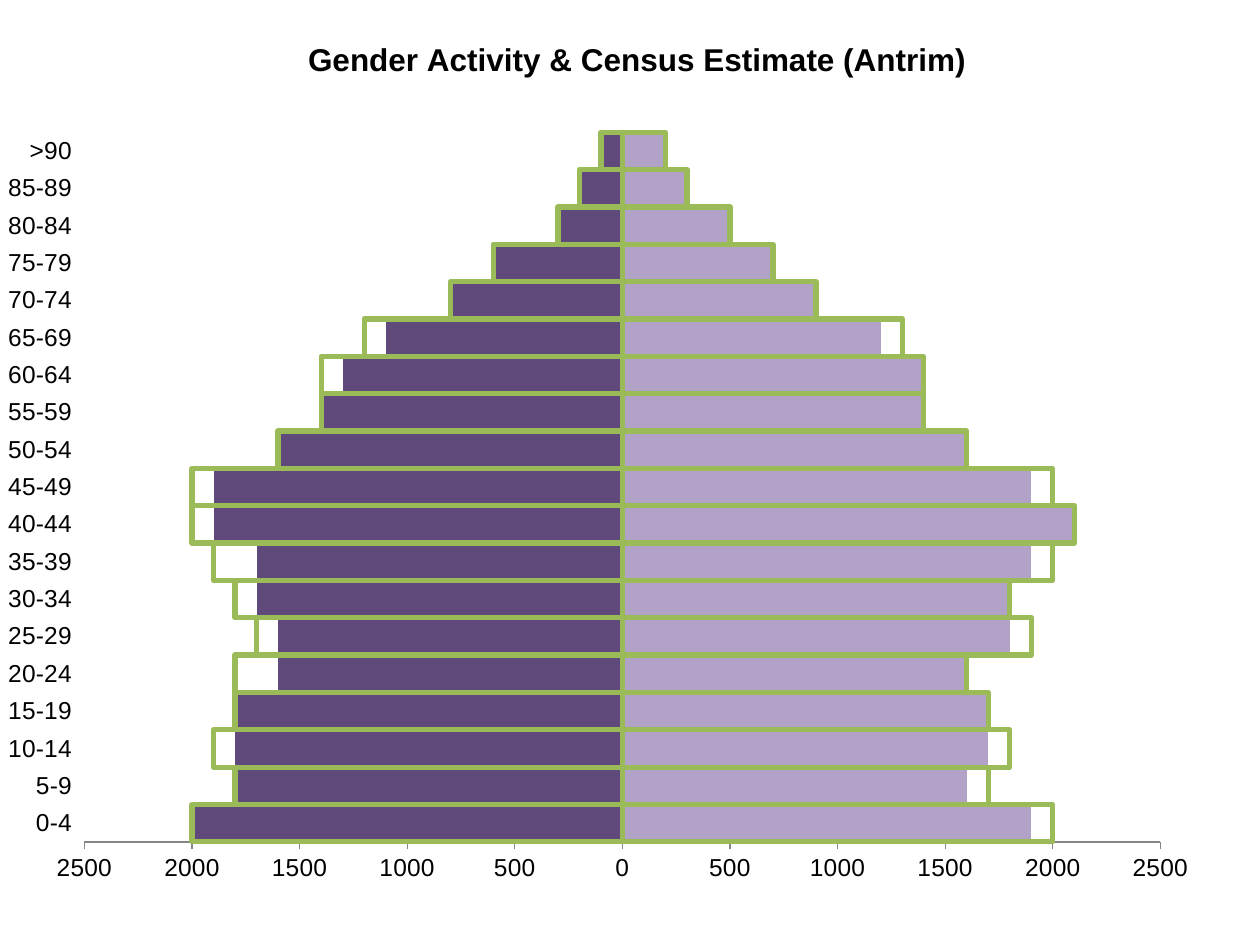
"""Build a population pyramid slide comparing activity with census estimates."""
import pptx
import pptx.chart.data
import pptx.dml.color
import pptx.enum.chart
import pptx.oxml
import pptx.oxml.ns
import pptx.util

Pt = pptx.util.Pt
XL = pptx.enum.chart
TITLE = "Gender Activity & Census Estimate (Antrim)"
AGES = [f"{a}-{a + 4}" for a in range(0, 90, 5)] + [">90"]
SERIES = [
    ("Series 1", "604A7B", None,
     [-2000, -1800, -1800, -1800, -1600, -1600, -1700, -1700, -1900, -1900,
      -1600, -1400, -1300, -1100, -800, -600, -300, -200, -100]),
    ("Series 2", None, "9BBB59",
     [-2000, -1800, -1900, -1800, -1800, -1700, -1800, -1900, -2000, -2000,
      -1600, -1400, -1400, -1200, -800, -600, -300, -200, -100]),
    ("Series 3", "B3A2C7", None,
     [1900, 1600, 1700, 1700, 1600, 1800, 1800, 1900, 2100, 1900,
      1600, 1400, 1400, 1200, 900, 700, 500, 300, 200]),
    ("Series 4", None, "9BBB59",
     [2000, 1700, 1800, 1700, 1600, 1900, 1800, 2000, 2100, 2000,
      1600, 1400, 1400, 1300, 900, 700, 500, 300, 200]),
]


def rgb(value):
    return pptx.dml.color.RGBColor.from_string(value)


def style_font(font, size, bold=False):
    font.name, font.size, font.bold = "Arial", Pt(size), bold
    font.color.rgb = rgb("000000")


def set_layout(parent, index, target=None, **place):
    for old in parent.findall(pptx.oxml.ns.qn("c:layout")):
        parent.remove(old)
    parts = [("layoutTarget", target)] if target else []
    parts += [(f"{k}Mode", "edge") for k in "xy"]
    parts += place.items()
    body = "".join(f'<c:{k} val="{v}"/>' for k, v in parts)
    parent.insert(index, pptx.oxml.parse_xml(
        f'<c:layout {pptx.oxml.ns.nsdecls("c")}><c:manualLayout>{body}'
        "</c:manualLayout></c:layout>"))


def add_pyramid(s, width, height):
    data = pptx.chart.data.CategoryChartData()
    data.categories = AGES
    for name, _, _, values in SERIES:
        data.add_series(name, values)
    chart = s.shapes.add_chart(
        XL.XL_CHART_TYPE.BAR_CLUSTERED, 0, 0, width, height, data).chart
    style_font(chart.font, 10)
    chart.has_legend = False
    chart.has_title = True
    r = chart.chart_title.text_frame.paragraphs[0].add_run()
    r.text = TITLE
    style_font(r.font, 18, True)
    set_layout(chart.chart_title._element, 1, x=0.24, y=0.035)
    set_layout(chart.plots[0]._element.getparent(), 0, "inner",
               x=0.067, y=0.14, w=0.854, h=0.751)

    plot = chart.plots[0]
    plot.gap_width, plot.overlap = 0, 100
    plot.vary_by_categories = False
    for ser, (_, fill, line, _) in zip(plot.series, SERIES):
        ser.invert_if_negative = False
        if fill:
            ser.format.fill.solid()
            ser.format.fill.fore_color.rgb = rgb(fill)
            ser.format.line.fill.background()
        else:
            ser.format.fill.background()
            ser.format.line.color.rgb = rgb(line)
            ser.format.line.width = Pt(3)

    ages, counts = chart.category_axis, chart.value_axis
    for axis in (ages, counts):
        axis.has_major_gridlines = False
        axis.major_tick_mark = XL.XL_TICK_MARK.OUTSIDE
        axis.minor_tick_mark = XL.XL_TICK_MARK.NONE
        axis.format.line.color.rgb = rgb("868686")
        axis.format.line.width = Pt(0.75)
        style_font(axis.tick_labels.font, 14)
    ages.tick_label_position = XL.XL_TICK_LABEL_POSITION.LOW
    counts.minimum_scale, counts.maximum_scale = -2500, 2500
    counts.major_unit = 500
    counts.tick_labels.number_format = "0;0"
    counts.tick_labels.number_format_is_linked = False


def main():
    prs = pptx.Presentation()
    prs.slide_width, prs.slide_height = Pt(720), Pt(540)
    s = prs.slides.add_slide(prs.slide_layouts[6])
    add_pyramid(s, prs.slide_width, prs.slide_height)
    prs.save("out.pptx")


if __name__ == "__main__":
    main()
